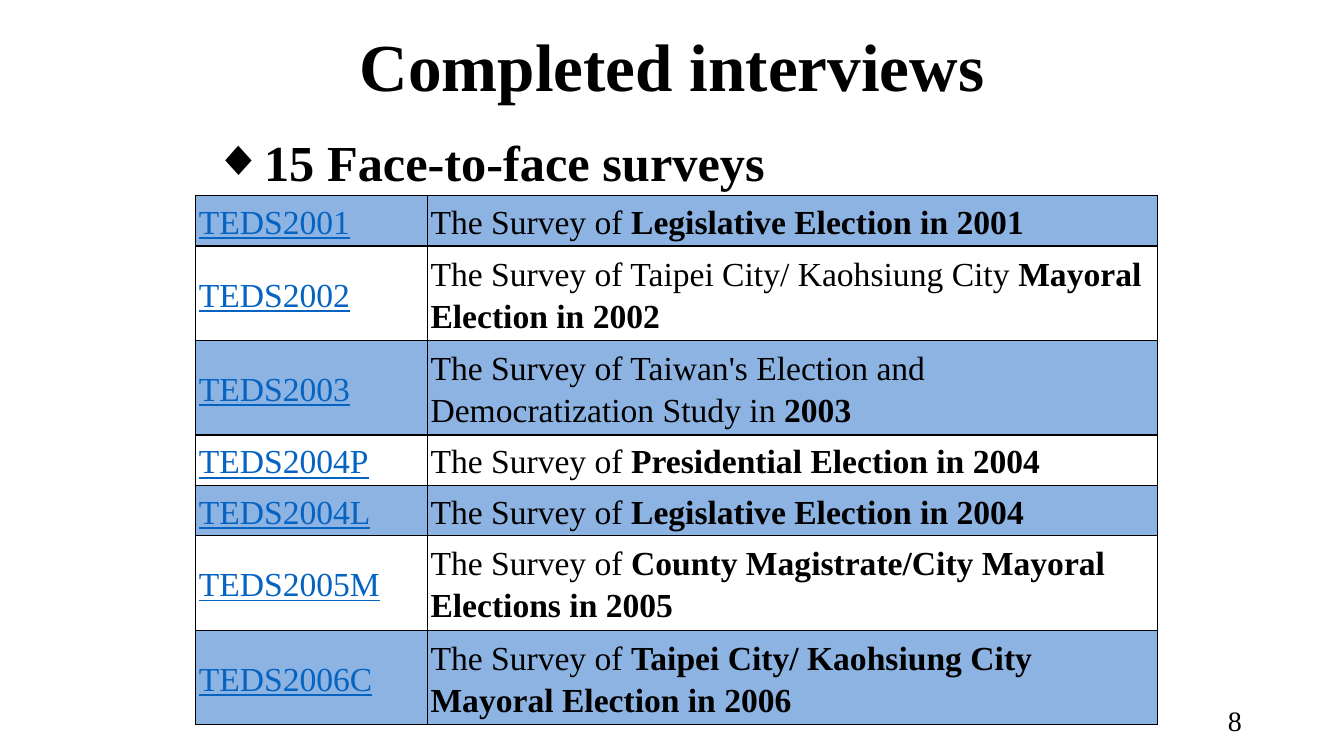
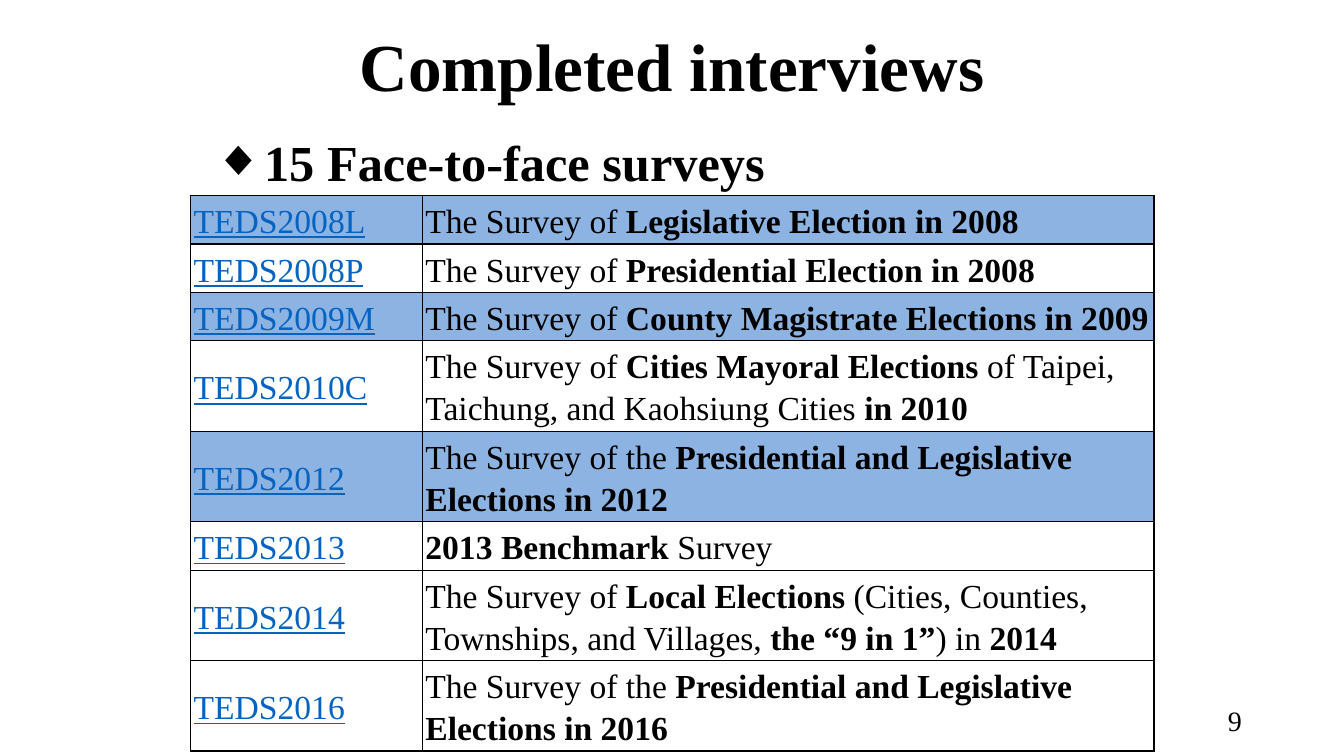
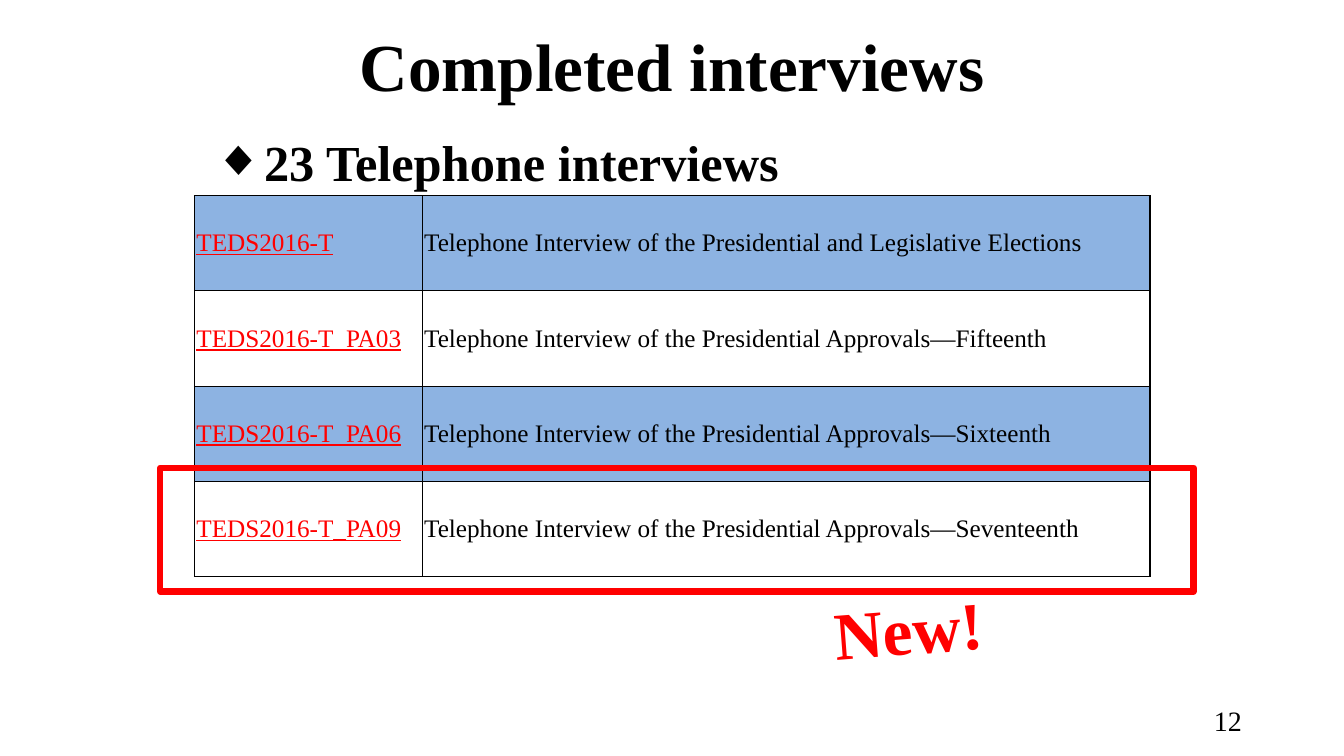
from dataclasses import dataclass

from lxml import etree
from pptx import Presentation
from pptx.dml.color import RGBColor
from pptx.enum import shapes, text
from pptx.oxml import ns
from pptx.util import Cm, Pt


@dataclass(frozen=True)
class Theme:
    font: str = "Times New Roman"
    ink: str = "000000"
    link: str = "0563C1"
    alert: str = "FF0000"
    band: str = "8DB3E2"
    paper: str = "FFFFFF"
    title_size: int = 48
    heading_size: int = 36
    table_size: int = 24
    small_table_size: int = 18
    number_size: int = 20


THEME = Theme()
TITLE = "Completed interviews"

# Asterisks enclose bold words
SURVEYS_TO_2006 = [
    ("TEDS2001", "The Survey of *Legislative Election in 2001*"),
    ("TEDS2002", "The Survey of Taipei City/ Kaohsiung City *Mayoral Election in 2002*"),
    ("TEDS2003", "The Survey of Taiwan's Election and Democratization Study in *2003*"),
    ("TEDS2004P", "The Survey of *Presidential Election in 2004*"),
    ("TEDS2004L", "The Survey of *Legislative Election in 2004*"),
    ("TEDS2005M", "The Survey of *County Magistrate/City Mayoral Elections in 2005*"),
    ("TEDS2006C", "The Survey of *Taipei City/ Kaohsiung City Mayoral Election in 2006*"),
]
SURVEYS_TO_2016 = [
    ("TEDS2008L", "The Survey of *Legislative Election in 2008*"),
    ("TEDS2008P", "The Survey of *Presidential Election in 2008*"),
    ("TEDS2009M", "The Survey of *County Magistrate Elections in 2009*"),
    ("TEDS2010C", "The Survey of *Cities Mayoral Elections *of Taipei, Taichung, "
                  "and Kaohsiung Cities *in 2010*"),
    ("TEDS2012", "The Survey of the *Presidential and Legislative Elections in 2012*"),
    ("TEDS2013", "*2013 Benchmark *Survey"),
    ("TEDS2014", "The Survey of *Local Elections *(Cities, Counties, Townships, "
                 "and Villages, *the “9 in 1”*) in *2014*"),
    ("TEDS2016", "The Survey of the *Presidential and Legislative Elections in 2016*"),
]
TELEPHONE_INTERVIEWS = [
    ("TEDS2016-T", "Telephone Interview of the Presidential and Legislative Elections"),
    ("TEDS2016-T_PA03", "Telephone Interview of the Presidential Approvals—Fifteenth"),
    ("TEDS2016-T_PA06", "Telephone Interview of the Presidential Approvals—Sixteenth"),
    ("TEDS2016-T_PA09", "Telephone Interview of the Presidential Approvals—Seventeenth"),
]


# Text
def write(frame, content, size, color=THEME.ink, bold=False, underline=False,
          align=text.PP_ALIGN.LEFT, anchor=text.MSO_ANCHOR.MIDDLE, spacing=None):
    """Fill a text frame; asterisks in the content switch bold on and off."""
    frame.word_wrap = True
    frame.vertical_anchor = anchor
    paragraph = frame.paragraphs[0]
    paragraph.alignment = align
    paragraph.space_before = Pt(0)
    if spacing:
        paragraph.line_spacing = spacing
    for index, part in enumerate(content.split("*")):
        if part:
            run = paragraph.add_run()
            run.text = part
            run.font.name = THEME.font
            run.font.size = Pt(size)
            run.font.bold = bold or index % 2 == 1
            run.font.underline = underline
            run.font.color.rgb = RGBColor.from_string(color)
    return paragraph


def place(shape, left, top, width, height):
    shape.left, shape.top = Cm(left), Cm(top)
    shape.width, shape.height = Cm(width), Cm(height)
    shape.text_frame.auto_size = text.MSO_AUTO_SIZE.NONE


def add_diamond_bullet(paragraph, indent):
    properties = paragraph._p.get_or_add_pPr()
    properties.set("marL", str(indent))
    properties.set("indent", str(-indent))
    color = etree.SubElement(properties, ns.qn("a:buClr"))
    etree.SubElement(color, ns.qn("a:srgbClr"), val=THEME.ink)
    etree.SubElement(properties, ns.qn("a:buFont"), typeface=THEME.font)
    etree.SubElement(properties, ns.qn("a:buChar"), char="◆")


# Slide with title, heading and number
def add_slide(presentation, heading, number):
    slide = presentation.slides.add_slide(presentation.slide_layouts[1])
    title, body = slide.placeholders
    place(title, 5.51, 0.33, 22.86, 2.59)
    write(title.text_frame, TITLE, THEME.title_size, bold=True,
          align=text.PP_ALIGN.CENTER)

    place(body, 5.13, 3.33, 23.6, 1.6)
    body.text_frame.margin_top = Cm(0.26)
    add_diamond_bullet(body.text_frame.paragraphs[0], Cm(1.27))
    write(body.text_frame, heading, THEME.heading_size, bold=True,
          align=text.PP_ALIGN.JUSTIFY, anchor=text.MSO_ANCHOR.TOP, spacing=0.8)

    number_box = slide.shapes.add_textbox(0, 0, 0, 0)
    place(number_box, 23.93, 17.65, 7.62, 1.02)
    write(number_box.text_frame, str(number), THEME.number_size,
          align=text.PP_ALIGN.RIGHT)
    return slide


# Table
def add_borders(cell):
    properties = cell._tc.get_or_add_tcPr()
    for side in ("lnL", "lnR", "lnT", "lnB"):
        line = etree.SubElement(properties, ns.qn("a:" + side), w=str(Pt(1)))
        fill = etree.SubElement(line, ns.qn("a:solidFill"))
        etree.SubElement(fill, ns.qn("a:srgbClr"), val=THEME.ink)


def add_survey_table(slide, surveys, left, widths, heights, shaded,
                     size=THEME.table_size, code_color=THEME.link,
                     margin=0.08, spacing=Pt(30)):
    frame = slide.shapes.add_table(len(surveys), 2, Cm(left), Cm(4.93),
                                   Cm(sum(widths)), Cm(sum(heights)))
    table = frame.table
    table.first_row = table.horz_banding = False
    for column, width in zip(table.columns, widths):
        column.width = Cm(width)
    for index, (survey, height) in enumerate(zip(surveys, heights)):
        table.rows[index].height = Cm(height)
        for column, content in enumerate(survey):
            is_code = column == 0
            cell = table.cell(index, column)
            cell.margin_left = cell.margin_right = Cm(margin)
            cell.margin_top = cell.margin_bottom = Cm(margin)
            add_borders(cell)
            cell.fill.solid()
            cell.fill.fore_color.rgb = RGBColor.from_string(
                THEME.band if index in shaded else THEME.paper)
            write(cell.text_frame, content, size, underline=is_code,
                  color=code_color if is_code else THEME.ink, spacing=spacing)
            cell.vertical_anchor = text.MSO_ANCHOR.MIDDLE


def row_heights(line_counts, single, double):
    return [single if count == "1" else double for count in line_counts]


# Highlight of the newest row
def add_new_mark(slide):
    outline = slide.shapes.add_shape(shapes.MSO_SHAPE.RECTANGLE, Cm(4.04),
                                     Cm(11.79), Cm(26.04), Cm(3.12))
    outline.shadow.inherit = False
    outline.fill.background()
    outline.line.color.rgb = RGBColor.from_string(THEME.alert)
    outline.line.width = Pt(4.5)

    label = slide.shapes.add_textbox(0, 0, 0, 0)
    place(label, 13.59, 14.43, 18.62, 2.77)
    label.rotation = -4.4
    write(label.text_frame, "New!", THEME.title_size, color=THEME.alert,
          bold=True, align=text.PP_ALIGN.CENTER)


def main():
    presentation = Presentation()
    presentation.slide_width, presentation.slide_height = Cm(33.87), Cm(19.05)

    slide = add_slide(presentation, "15 Face-to-face surveys", 8)
    add_survey_table(slide, SURVEYS_TO_2006, 4.93, (5.84, 18.4),
                     row_heights("1221122", 1.27, 2.38), shaded=(0, 2, 4, 6))

    slide = add_slide(presentation, "15 Face-to-face surveys", 9)
    add_survey_table(slide, SURVEYS_TO_2016, 4.8, (5.84, 18.44),
                     row_heights("11122122", 1.22, 2.28), shaded=(0, 2, 4))

    slide = add_slide(presentation, "23 Telephone interviews", 12)
    add_survey_table(slide, TELEPHONE_INTERVIEWS, 4.9, (5.74, 18.34),
                     [2.4] * len(TELEPHONE_INTERVIEWS), shaded=(0, 2),
                     size=THEME.small_table_size, code_color=THEME.alert,
                     margin=0.05, spacing=None)
    add_new_mark(slide)

    presentation.save("out.pptx")


if __name__ == "__main__":
    main()
